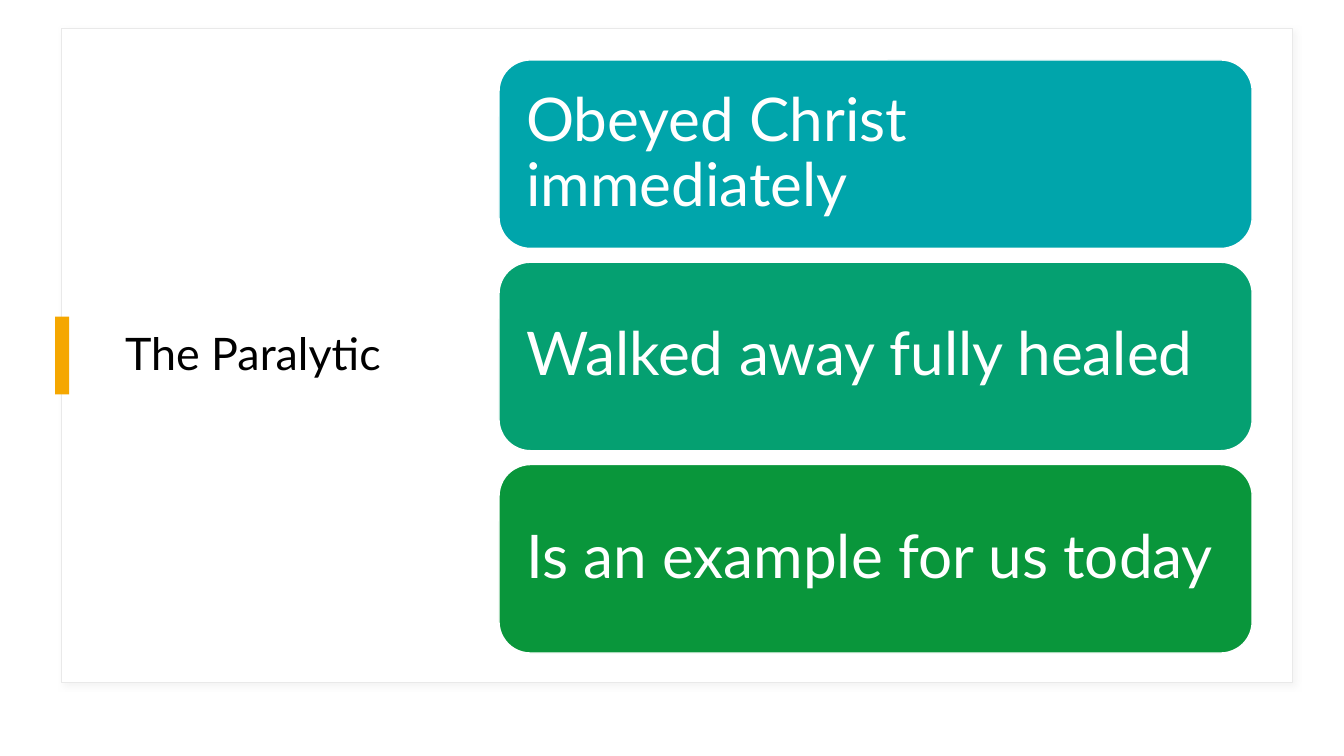
import pptx
import pptx.util
import pptx.dml.color
import pptx.enum.shapes
import pptx.enum.text
import pptx.oxml
import pptx.oxml.ns

RGB = pptx.dml.color.RGBColor
SHAPE = pptx.enum.shapes.MSO_SHAPE

WHITE = RGB(0xFF, 0xFF, 0xFF)
BLACK = RGB(0x00, 0x00, 0x00)
BORDER = RGB(0xE9, 0xE9, 0xE9)
SHADOW = RGB(0xD9, 0xD9, 0xD9)
AMBER = RGB(0xF5, 0xA7, 0x00)
TEAL = RGB(0x00, 0xA5, 0xAB)
JADE = RGB(0x05, 0xA0, 0x71)
GREEN = RGB(0x09, 0x96, 0x3B)

POINTS = [
    ("Obeyed Christ immediately", TEAL),
    ("Walked away fully healed", JADE),
    ("Is an example for us today", GREEN),
]
POINT_TOP = 7.93
POINT_PITCH = 26.76


def write_text(tf, text, size, color, font="Lato", inset=0.1):
    tf.word_wrap = True
    tf.auto_size = pptx.enum.text.MSO_AUTO_SIZE.NONE
    tf.vertical_anchor = pptx.enum.text.MSO_ANCHOR.MIDDLE
    tf.margin_left = tf.margin_right = pptx.util.Inches(inset)
    tf.margin_top = tf.margin_bottom = pptx.util.Inches(inset)
    p = tf.paragraphs[0]
    p.alignment = pptx.enum.text.PP_ALIGN.LEFT
    p.line_spacing = 0.9
    r = p.add_run()
    r.text = text
    r.font.name = font
    r.font.size = pptx.util.Pt(size)
    r.font.color.rgb = color


class Deck:
    def __init__(self, width, height):
        self.prs = pptx.Presentation()
        self.prs.slide_width = pptx.util.Inches(width)
        self.prs.slide_height = pptx.util.Inches(height)
        self.s = self.prs.slides.add_slide(self.prs.slide_layouts[5])

    def area(self, left, top, width, height):
        w, h = self.prs.slide_width, self.prs.slide_height
        shares = ((left, w), (top, h), (width, w), (height, h))
        return [round(share * side / 100) for share, side in shares]

    def shape(self, kind, area, fill, line=None):
        sp = self.s.shapes.add_shape(kind, *self.area(*area))
        sp.shadow.inherit = False
        sp.fill.solid()
        sp.fill.fore_color.rgb = fill
        if line is None:
            sp.line.fill.background()
        else:
            sp.line.color.rgb = line
            sp.line.width = pptx.util.Pt(1)
        return sp

    def card(self, area):
        sp = self.shape(SHAPE.RECTANGLE, area, WHITE, BORDER)
        effects = sp.element.spPr.find(pptx.oxml.ns.qn("a:effectLst"))
        effects.append(pptx.oxml.parse_xml(
            f'<a:outerShdw {pptx.oxml.ns.nsdecls("a")} blurRad="{pptx.util.Pt(4)}" '
            f'dist="{pptx.util.Pt(3)}" dir="2700000" algn="tl" rotWithShape="0">'
            f'<a:srgbClr val="{SHADOW}"><a:alpha val="30000"/></a:srgbClr></a:outerShdw>'))

    def title(self, text, area):
        sp = self.s.shapes.title
        sp.left, sp.top, sp.width, sp.height = self.area(*area)
        write_text(sp.text_frame, text, size=32, color=BLACK)
        sp.element.getparent().append(sp.element)

    def bar(self, area):
        self.shape(SHAPE.RECTANGLE, area, AMBER)

    def point(self, text, area, fill):
        sp = self.shape(SHAPE.ROUNDED_RECTANGLE, area, fill, WHITE)
        write_text(sp.text_frame, text, size=43, color=WHITE, inset=0.18)


def main():
    deck = Deck(13.33, 7.5)
    deck.card((4.58, 3.77, 91.6, 86.5))
    deck.title("The Paralytic", (8.55, 7.4, 24.53, 79.33))
    deck.bar((4.1, 41.9, 1.05, 10.27))
    for i, (text, fill) in enumerate(POINTS):
        deck.point(text, (37.13, POINT_TOP + i * POINT_PITCH, 56.04, 24.93), fill)
    deck.prs.save("out.pptx")


if __name__ == "__main__":
    main()
